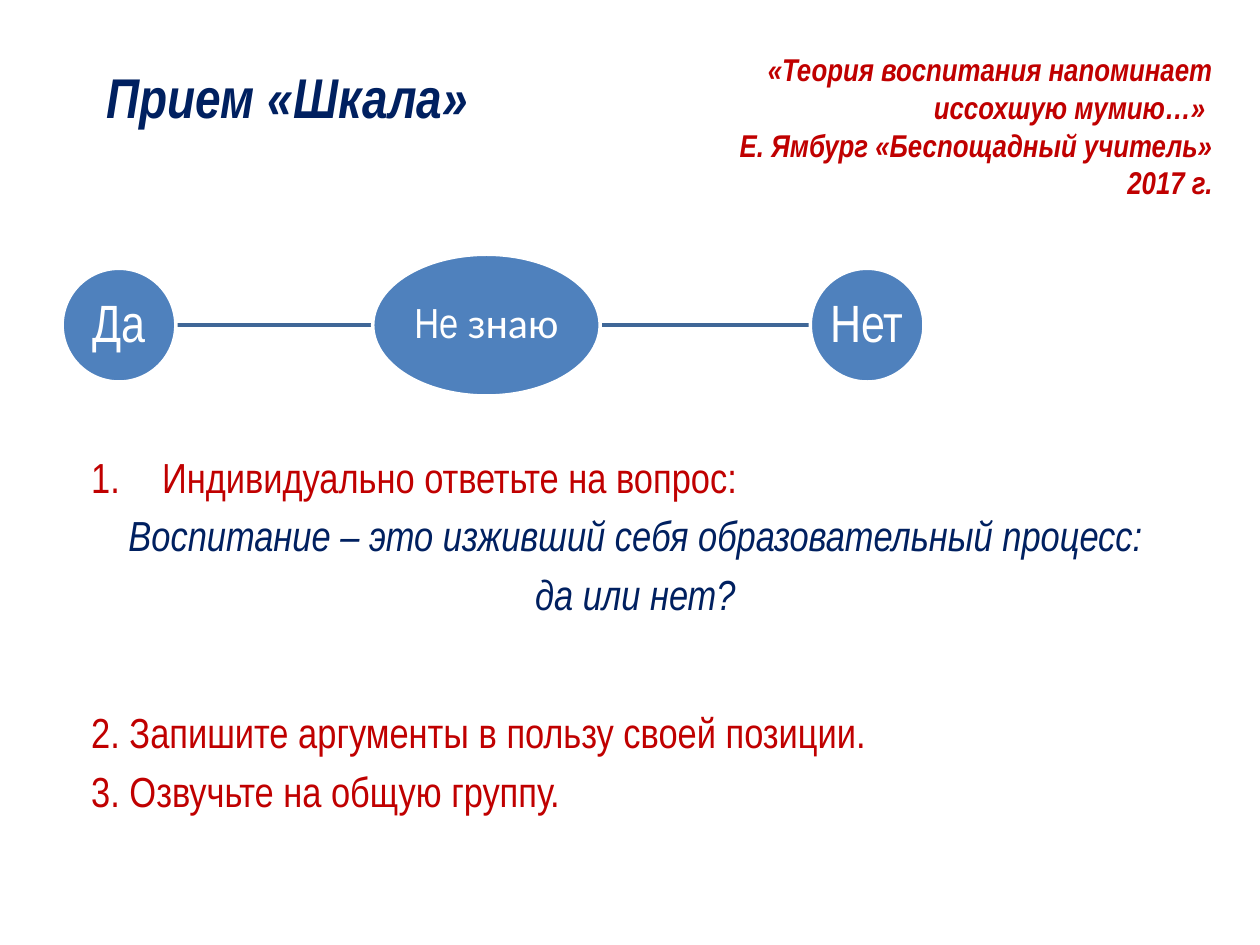
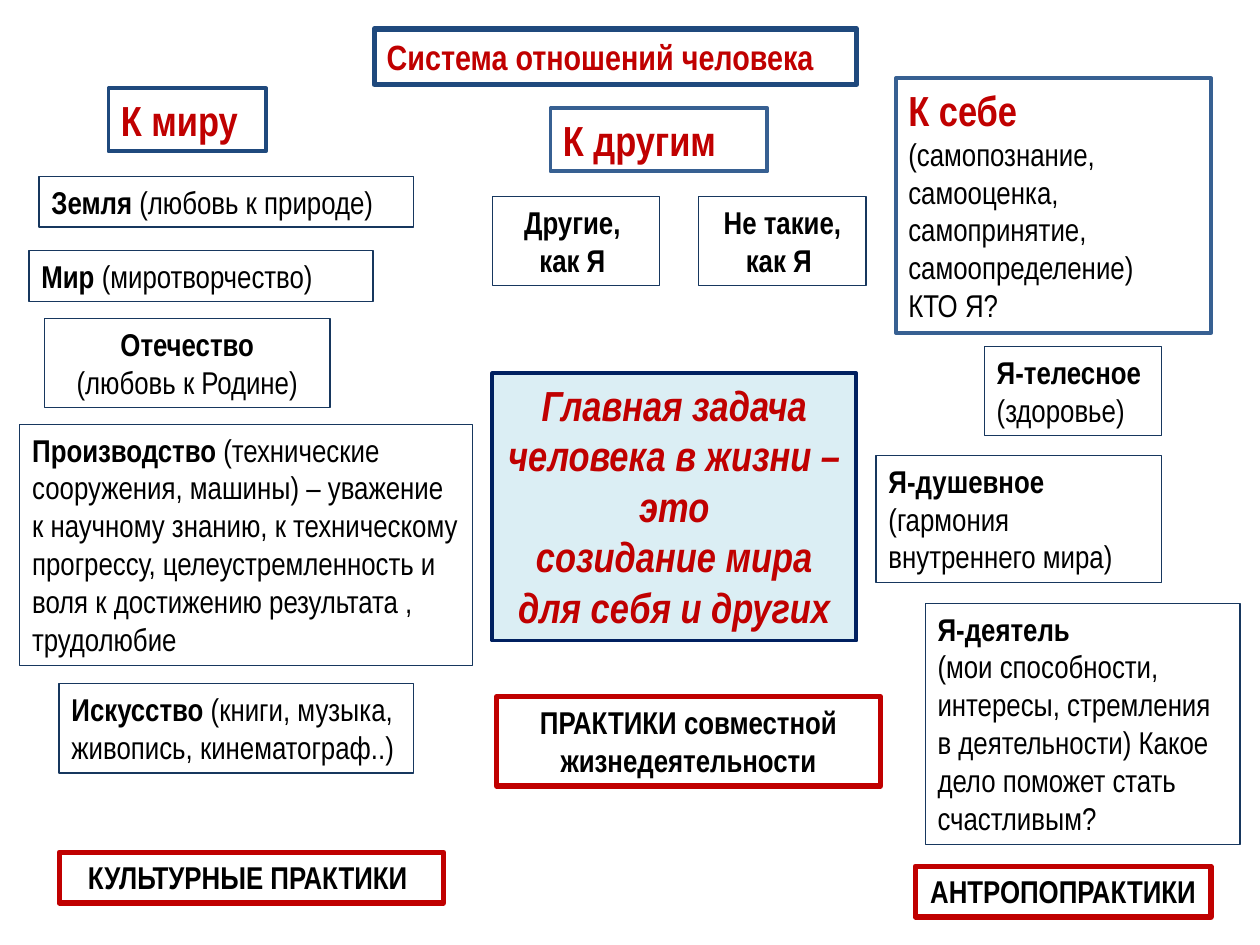
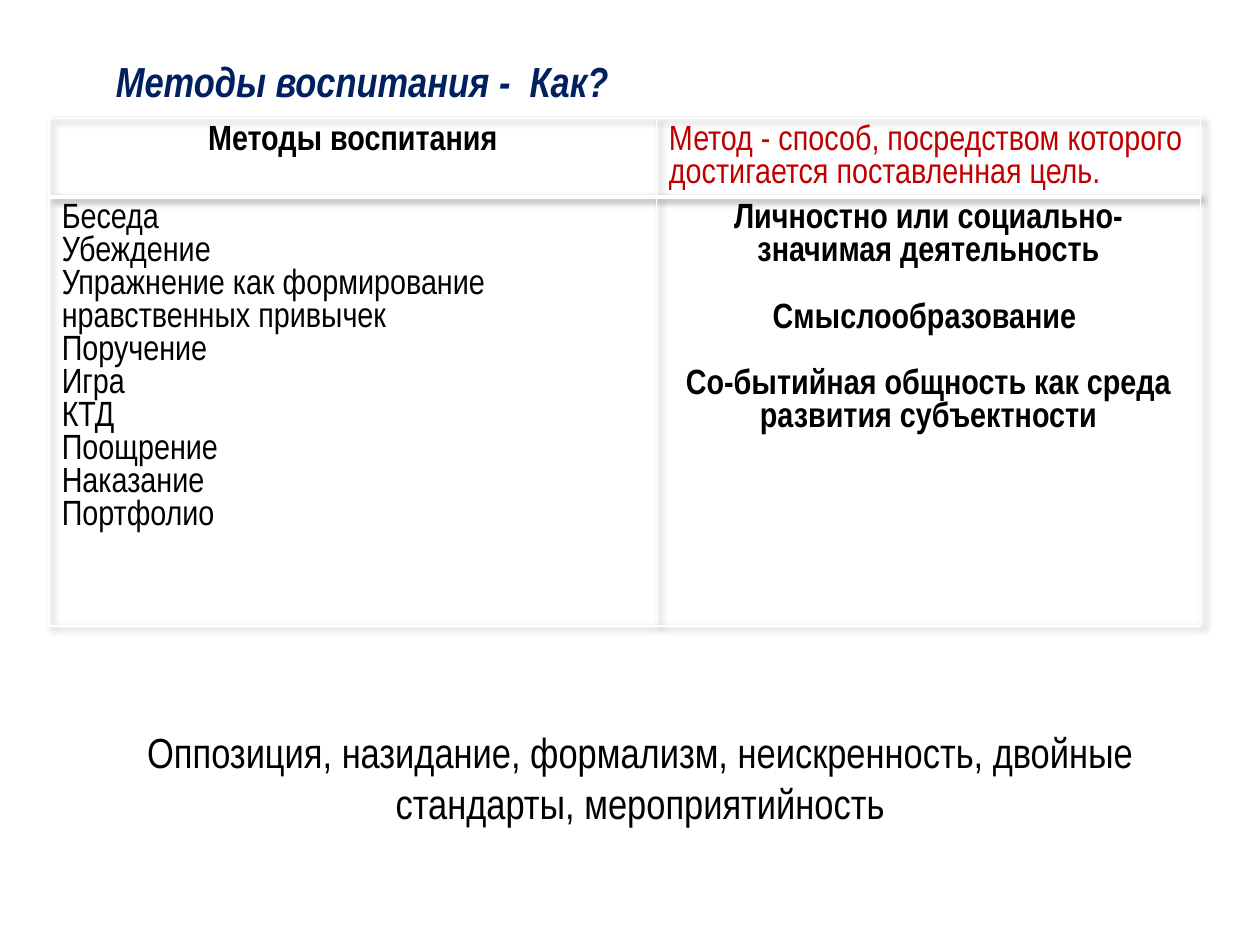
from lxml import etree
from pptx import Presentation
from pptx.dml import color as dml
from pptx.enum import shapes, text
from pptx.oxml import ns, parse_xml
from pptx.util import Pt

FONT = "Arial Narrow"
RED, NAVY, BLACK, WHITE = "C00000", "002060", "000000", "FFFFFF"
DEEP_BLUE, MID_BLUE, THIN_BLUE = "1F497D", "376092", "17375E"
OVAL_BLUE, LINK_BLUE, PALE_BLUE = "4F81BD", "3F6797", "DBEEF4"
LEFT, CENTER, RIGHT = text.PP_ALIGN.LEFT, text.PP_ALIGN.CENTER, text.PP_ALIGN.RIGHT

# Run styles
TITLE = dict(size=32, bold=True, italic=True, color=NAVY)
SUBTITLE = dict(TITLE, size=24)
HEADING = dict(size=24, bold=True, color=RED)
BOLD = dict(size=18, bold=True)
PLAIN = dict(size=18)
TASK = dict(size=24, color=RED)
QUESTION = dict(size=24, color=NAVY, italic=True)
QUOTE = dict(size=18, color=RED, bold=True, italic=True)
CELL = dict(size=20)
CELL_BOLD = dict(size=20, bold=True)

# Outlines: colour and width
THIN = (THIN_BLUE, 0.75)
PRACTICE = (RED, 3)


def rgb(value):
    return dml.RGBColor.from_string(value)


def set_values(target, values):
    for name, value in values.items():
        setattr(target, name, value)


def add_runs(paragraph, runs, values):
    """Fill a paragraph with (words, style) pairs and format it."""
    set_values(paragraph, values)
    for words, style in runs:
        run = paragraph.add_run()
        run.text = words
        style = dict(dict(name=FONT, bold=False, italic=False, color=BLACK), **style)
        run.font.color.rgb = rgb(style.pop("color"))
        style["size"] = Pt(style["size"])
        set_values(run.font, style)


def write(frame, paragraphs, **values):
    """Write a list of paragraphs, each a list of runs."""
    for index, runs in enumerate(paragraphs):
        paragraph = frame.paragraphs[0] if index == 0 else frame.add_paragraph()
        add_runs(paragraph, runs, values)
    return frame.paragraphs


def prepare_frame(frame, anchor=text.MSO_ANCHOR.TOP, wrap=True):
    set_values(frame, dict(word_wrap=wrap, auto_size=text.MSO_AUTO_SIZE.NONE,
                           vertical_anchor=anchor))
    return frame


def set_outline(shape, outline):
    shape.line.color.rgb = rgb(outline[0])
    shape.line.width = Pt(outline[1])


def set_title(slide, place, words, style):
    title = slide.shapes.title
    set_values(title, dict(zip(("left", "top", "width", "height"), map(Pt, place))))
    write(prepare_frame(title.text_frame), [[(words, style)]], alignment=LEFT)
    return title


def add_text(slide, place, paragraphs, align=LEFT):
    box = slide.shapes.add_textbox(*map(Pt, place))
    return write(prepare_frame(box.text_frame), paragraphs, alignment=align)


def add_box(slide, place, paragraphs, outline=THIN, align=LEFT, fill=None):
    box = slide.shapes.add_shape(shapes.MSO_SHAPE.RECTANGLE, *map(Pt, place))
    box.shadow.inherit = False
    if fill:
        box.fill.solid()
        box.fill.fore_color.rgb = rgb(fill)
    else:
        box.fill.background()
    set_outline(box, outline)
    write(prepare_frame(box.text_frame), paragraphs, alignment=align)


def add_oval(slide, center_x, center_y, width, height, runs):
    oval = slide.shapes.add_shape(
        shapes.MSO_SHAPE.OVAL, Pt(center_x - width / 2), Pt(center_y - height / 2),
        Pt(width), Pt(height))
    oval.shadow.inherit = False
    oval.fill.solid()
    oval.fill.fore_color.rgb = rgb(OVAL_BLUE)
    set_outline(oval, (WHITE, 2))
    frame = prepare_frame(oval.text_frame, text.MSO_ANCHOR.MIDDLE, wrap=False)
    write(frame, [runs], alignment=CENTER, line_spacing=0.9)


def add_link(slide, start, end, y):
    link = slide.shapes.add_connector(
        shapes.MSO_CONNECTOR.STRAIGHT, Pt(start), Pt(y), Pt(end), Pt(y))
    set_outline(link, (LINK_BLUE, 2))
    etree.SubElement(link._element.spPr, ns.qn("a:effectLst"))


def add_number(paragraph, indent):
    properties = paragraph._p.get_or_add_pPr()
    properties.set("marL", str(Pt(indent)))
    properties.set("indent", str(-Pt(indent)))
    number = etree.SubElement(properties, ns.qn("a:buAutoNum"))
    number.set("type", "arabicPeriod")


def set_borders(cell, bottom):
    properties = cell._tc.get_or_add_tcPr()
    widths = dict(lnL=1, lnR=1, lnT=1, lnB=bottom)
    for index, (side, width) in enumerate(widths.items()):
        properties.insert(index, parse_xml(
            f'<a:{side} {ns.nsdecls("a")} w="{Pt(width)}"><a:solidFill>'
            f'<a:srgbClr val="{WHITE}"/></a:solidFill></a:{side}>'))


def add_table(slide, place, widths, heights, cells):
    """cells holds rows of (paragraphs, alignment)."""
    table = slide.shapes.add_table(len(heights), len(widths), *map(Pt, place)).table
    table.horz_banding = False
    table._tbl.tblPr.insert(0, parse_xml(
        f'<a:effectLst {ns.nsdecls("a")}><a:outerShdw blurRad="50800" dist="38100" '
        'dir="2700000" algn="tl"><a:srgbClr val="000000"><a:alpha val="40000"/>'
        '</a:srgbClr></a:outerShdw></a:effectLst>'))
    for column, width in zip(table.columns, widths):
        column.width = Pt(width)
    for row_index, height in enumerate(heights):
        table.rows[row_index].height = Pt(height)
        for column_index, (paragraphs, align) in enumerate(cells[row_index]):
            cell = table.cell(row_index, column_index)
            cell.fill.background()
            set_borders(cell, bottom=3 if row_index == 0 else 1)
            write(cell.text_frame, paragraphs, alignment=align)
    return table


def build_scale(slide):
    set_title(slide, (53.5, 32, 310, 48), "Прием «Шкала»", TITLE)

    # Scale from yes to no
    axis = 185.8
    large = dict(size=30, color=WHITE)
    medium = dict(size=24, color=WHITE)
    add_link(slide, 101, 213.5, axis)
    add_link(slide, 342.5, 463, axis)
    add_oval(slide, 68, axis, 65, 65, [("Да", large)])
    add_oval(slide, 278, axis, 130, 81,
             [("Не", medium), (" знаю", dict(medium, name="Calibri"))])
    add_oval(slide, 495.5, axis, 65, 65, [("Нет", large)])

    # Tasks
    paragraphs = add_text(slide, (45, 254.3, 641.5, 230), [
        [("Индивидуально ответьте на вопрос:", TASK)],
        [("Воспитание – это изживший себя образовательный процесс: ", QUESTION)],
        [("да или нет? ", QUESTION)],
        [("2. Запишите аргументы в пользу своей позиции.", TASK)],
        [("3. Озвучьте на общую группу.", TASK)],
    ])
    add_number(paragraphs[0], 40.5)
    for paragraph, gap in zip(paragraphs, (0, 4.8, 4.8, 50, 4.8)):
        paragraph.space_before = Pt(gap)
    for paragraph in paragraphs[1:3]:
        paragraph.alignment = CENTER

    # Quotation
    add_text(slide, (382.5, 25, 317.5, 94.3), [
        [("«Теория воспитания напоминает иссохшую мумию…» ", QUOTE)],
        [("Е. Ямбург «Беспощадный учитель» 2017 г.", QUOTE)],
    ], RIGHT)


def build_relations(slide):
    title = set_title(slide, (213.8, 16.5, 275.8, 31.7),
                      "Система отношений человека", dict(HEADING, size=20))
    set_outline(title, (DEEP_BLUE, 3))

    # Headings of the three directions
    add_box(slide, (62, 50.5, 90, 36), [[("К миру", HEADING)]], (DEEP_BLUE, 2.25))
    add_box(slide, (314.6, 62, 124, 36), [[("К другим", HEADING)]], (MID_BLUE, 2.25))
    add_box(slide, (512, 44.7, 180, 145.5), [
        [("К себе", HEADING)],
        [("(самопознание, самооценка,", PLAIN)],
        [("самопринятие, самоопределение)", PLAIN)],
        [("КТО Я?", PLAIN)],
    ], (MID_BLUE, 2.25))

    # Bold term followed by its explanation
    for place, term, explanation in (
        ((22.3, 100.8, 214, 29), "Земля", " (любовь к природе)"),
        ((16.6, 143.3, 196.6, 29), "Мир", " (миротворчество)"),
        ((11.3, 242.5, 258.7, 138), "Производство",
         " (технические сооружения, машины) – уважение к научному знанию, "
         "к техническому прогрессу, целеустремленность и воля к достижению "
         "результата , трудолюбие"),
        ((33.8, 390.7, 202.5, 51), "Искусство",
         " (книги, музыка, живопись, кинематограф..)"),
        ((562.5, 198, 101.3, 51), "Я-телесное", " (здоровье)"),
        ((500.6, 260.4, 163.3, 72.5), "Я-душевное ", "(гармония внутреннего мира)"),
    ):
        add_box(slide, place, [[(term, BOLD), (explanation, PLAIN)]])
    add_box(slide, (25.3, 182, 163.3, 51),
            [[("Отечество", BOLD)], [("(любовь к Родине)", PLAIN)]], align=CENTER)
    add_box(slide, (528.7, 344.8, 180, 138), [
        [("Я-деятель", BOLD)],
        [("(мои способности, интересы, стремления  в деятельности) "
          "Какое дело поможет стать счастливым?", PLAIN)],
    ])

    # Other people and practices
    for place, words, outline in (
        ((281.3, 112.3, 95.7, 51), "Другие,  как Я ", THIN),
        ((399.3, 112.3, 95.7, 51), "Не такие, как Я ", THIN),
        ((33.8, 487, 219.7, 29), "КУЛЬТУРНЫЕ ПРАКТИКИ ", PRACTICE),
        ((283.7, 398.2, 219.5, 51), "ПРАКТИКИ совместной жизнедеятельности", PRACTICE),
        ((523, 495, 169, 29), "АНТРОПОПРАКТИКИ", PRACTICE),
    ):
        add_box(slide, place, [[(words, BOLD)]], outline, CENTER)

    # Main task
    main_task = dict(HEADING, italic=True)
    add_box(slide, (281.3, 213.3, 208, 152.7), [
        [("Главная задача человека в жизни – это", main_task)],
        [("созидание мира для себя и других", main_task)],
    ], (NAVY, 2.25), CENTER, PALE_BLUE)


def build_methods(slide):
    set_title(slide, (59, 28, 400, 36), "Методы воспитания -  Как?", SUBTITLE)

    methods = ("Беседа", "Убеждение",
               "Упражнение как формирование нравственных привычек",
               "Поручение", "Игра", "КТД", "Поощрение", "Наказание", "Портфолио")
    principles = ("Личностно или социально-значимая деятельность",
                  "Смыслообразование ",
                  "Со-бытийная общность как среда развития субъектности")
    definition = "Метод - способ, посредством которого достигается поставленная цель."
    table = add_table(slide, (28.1, 67.7, 658, 290), (347, 311), (44.6, 245), [
        [([[("Методы воспитания", CELL_BOLD)]], CENTER),
         ([[(definition, dict(CELL, color=RED))]], LEFT)],
        [([[(method, CELL)] for method in methods], LEFT),
         ([[(principle, CELL_BOLD)] for principle in principles], CENTER)],
    ])
    for paragraph in table.cell(1, 1).text_frame.paragraphs[1:]:
        paragraph.space_before = Pt(19)

    add_text(slide, (70.6, 411.8, 590.4, 65.4), [
        [("Оппозиция, назидание, формализм, неискренность, двойные стандарты, "
          "мероприятийность", dict(size=24))],
    ], CENTER)


def main():
    presentation = Presentation()
    presentation.slide_width, presentation.slide_height = Pt(720), Pt(540)
    title_only = presentation.slide_layouts[5]
    for build in (build_scale, build_relations, build_methods):
        build(presentation.slides.add_slide(title_only))
    presentation.save("out.pptx")


if __name__ == "__main__":
    main()
